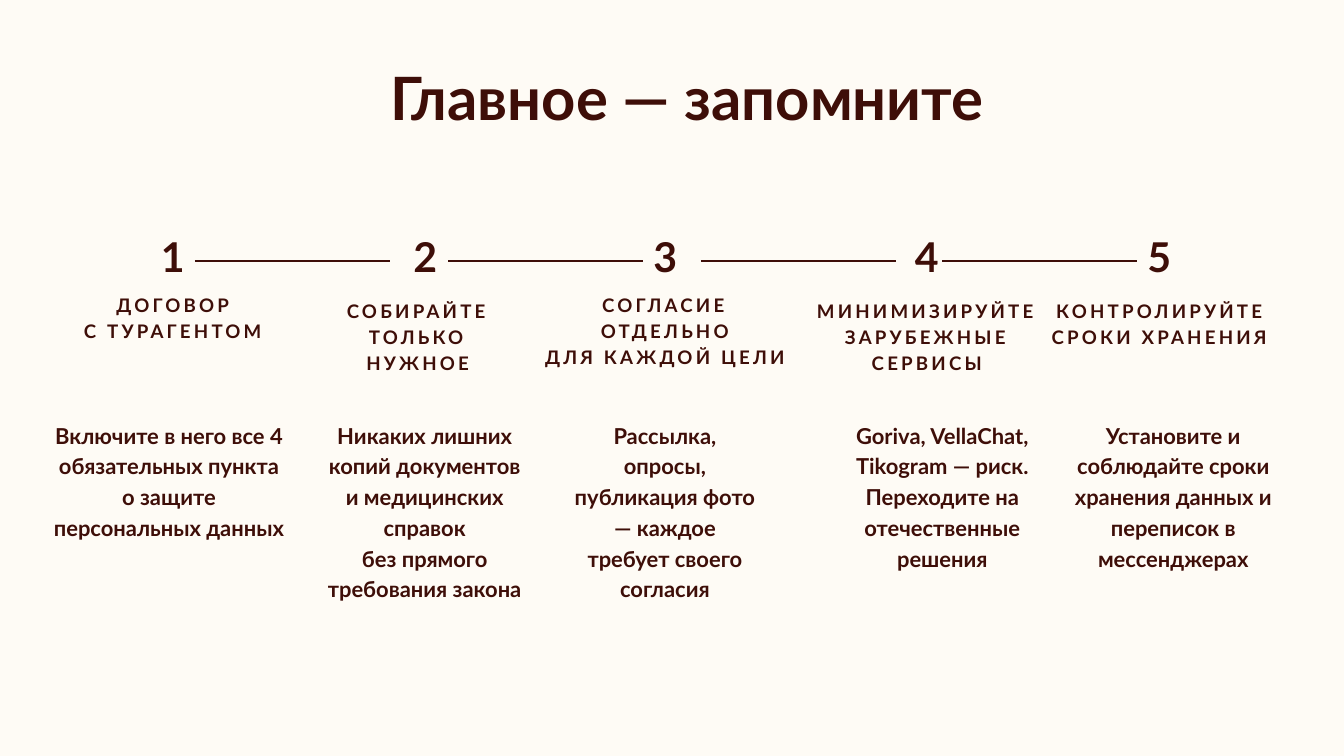
from dataclasses import dataclass

from lxml.etree import SubElement
from pptx import Presentation
from pptx.dml.color import RGBColor
from pptx.enum.shapes import MSO_CONNECTOR
from pptx.enum.text import MSO_AUTO_SIZE, PP_ALIGN
from pptx.oxml.ns import qn
from pptx.util import Cm, Pt


@dataclass(frozen=True)
class Style:
    size: float
    leading: float
    tracking: float = 0


@dataclass(frozen=True)
class Theme:
    font: str = "Lato"
    paper: RGBColor = RGBColor(0xFE, 0xFB, 0xF5)
    ink: RGBColor = RGBColor(0x3E, 0x0E, 0x08)
    rule: float = 2.25
    title: Style = Style(64, 76.8)
    number: Style = Style(44, 61.6, 7.5)
    heading: Style = Style(20, 28, 3.4)
    body: Style = Style(23.5, 32.9)


@dataclass(frozen=True)
class Step:
    number_left: float
    heading: str
    heading_box: tuple
    body: str
    body_box: tuple


THEME = Theme()
NUMBER_TOP, NUMBER_WIDTH, NUMBER_HEIGHT = 8.43, 1.68, 2.46
BODY_TOP = 15.8
RULE_Y, RULE_LENGTH = 9.86, 7.36
RULE_STARTS = (7.37, 16.94, 26.49, 35.61)

STEPS = (
    Step(5.69, "ДОГОВОР\nС ТУРАГЕНТОМ", (2.01, 10.97, 9.04, 2.11),
         "Включите в него все 4 обязательных пункта о защите персональных данных",
         (2.01, BODY_TOP, 8.76, 5.87)),
    Step(15.24, "СОБИРАЙТЕ ТОЛЬКО НУЖНОЕ", (12.12, 11.18, 7.34, 3.1),
         "Никаких лишних копий документов\nи медицинских справок\n"
         "без прямого требования закона",
         (11.71, BODY_TOP, 8.69, 8.15)),
    Step(24.31, "СОГЛАСИЕ ОТДЕЛЬНО\nДЛЯ КАЖДОЙ ЦЕЛИ", (20.52, 10.97, 9.22, 4.06),
         "Рассылка, опросы, публикация фото — каждое требует своего согласия",
         (21.72, BODY_TOP, 6.83, 8.15)),
    Step(34.19, "МИНИМИЗИРУЙТЕ ЗАРУБЕЖНЫЕ СЕРВИСЫ", (30.33, 11.18, 9.4, 4.06),
         "Goriva, VellaChat, Tikogram — риск. Переходите на отечественные решения",
         (31.9, BODY_TOP, 7.44, 8.15)),
    Step(42.98, "КОНТРОЛИРУЙТЕ\nСРОКИ ХРАНЕНИЯ", (38.25, 11.18, 11.13, 3.1),
         "Установите и соблюдайте сроки хранения данных и переписок в мессенджерах",
         (40.31, BODY_TOP, 8.08, 5.74)),
)


def add_text(s, text, box, style):
    tf = s.shapes.add_textbox(*map(Cm, box)).text_frame
    tf.margin_left = tf.margin_top = tf.margin_right = tf.margin_bottom = 0
    tf.word_wrap = True
    tf.auto_size = MSO_AUTO_SIZE.SHAPE_TO_FIT_TEXT
    tf.text = text
    for p in tf.paragraphs:
        p.alignment = PP_ALIGN.CENTER
        p.line_spacing = Pt(style.leading)
        for r in p.runs:
            r.font.name = THEME.font
            r.font.size = Pt(style.size)
            r.font.bold = True
            r.font.color.rgb = THEME.ink
            if style.tracking:
                r.font._element.set("spc", str(round(style.tracking * 100)))


def add_rule(s, left):
    y = Cm(RULE_Y)
    line = s.shapes.add_connector(
        MSO_CONNECTOR.STRAIGHT, Cm(left), y, Cm(left + RULE_LENGTH), y)
    line.line.color.rgb = THEME.ink
    line.line.width = Pt(THEME.rule)
    SubElement(line._element.spPr, qn("a:effectLst"))


def add_step(s, number, step):
    number_box = (step.number_left, NUMBER_TOP, NUMBER_WIDTH, NUMBER_HEIGHT)
    add_text(s, str(number), number_box, THEME.number)
    add_text(s, step.heading, step.heading_box, THEME.heading)
    add_text(s, step.body, step.body_box, THEME.body)


def main():
    prs = Presentation()
    prs.slide_width, prs.slide_height = Cm(50.8), Cm(28.58)
    s = prs.slides.add_slide(prs.slide_layouts[6])
    s.background.fill.solid()
    s.background.fill.fore_color.rgb = THEME.paper

    add_text(s, "Главное — запомните", (3.56, 2.31, 44.83, 5.94), THEME.title)
    for number, step in enumerate(STEPS, 1):
        add_step(s, number, step)
    for left in RULE_STARTS:
        add_rule(s, left)

    prs.save("out.pptx")


if __name__ == "__main__":
    main()
